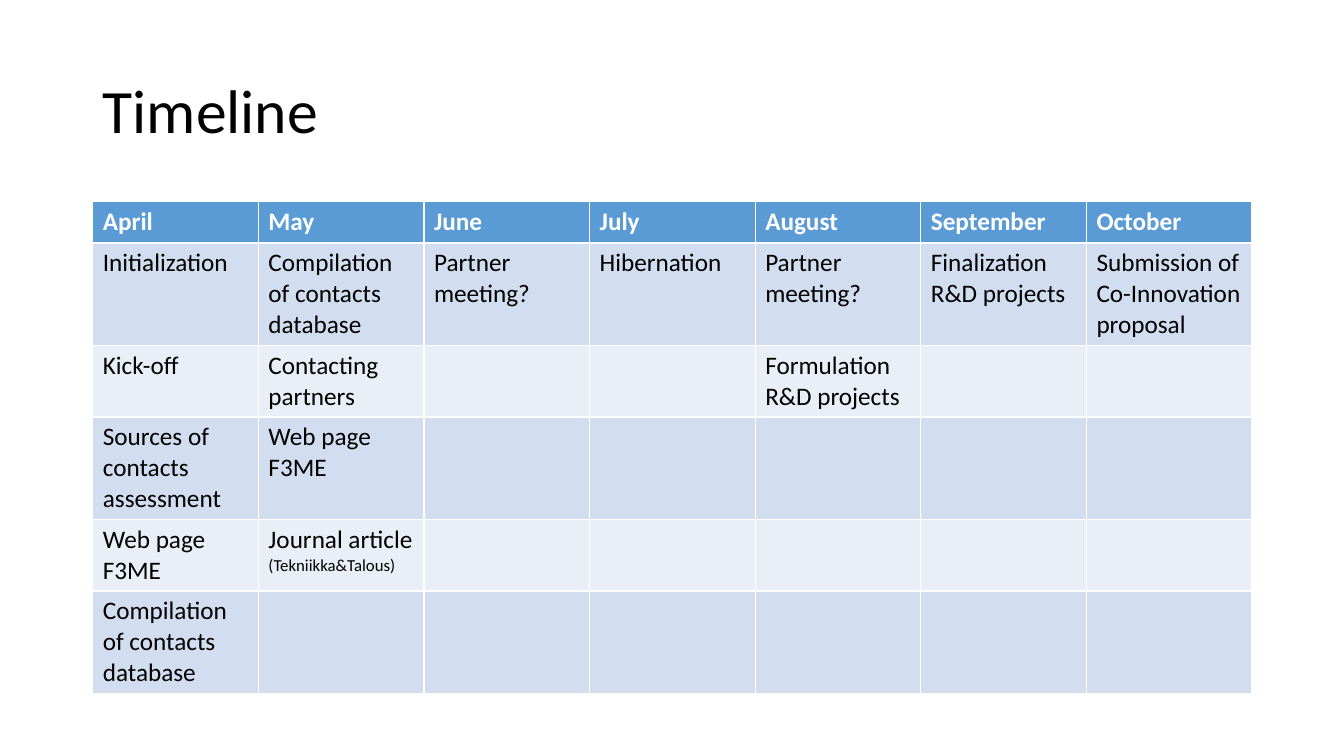
from pptx import Presentation
from pptx.dml.color import RGBColor
from pptx.enum.text import MSO_ANCHOR, MSO_AUTO_SIZE, PP_ALIGN
from pptx.util import Inches, Pt

MIDDLE = MSO_ANCHOR.MIDDLE
NO_FIT = MSO_AUTO_SIZE.NONE
LEFT = PP_ALIGN.LEFT
TITLE_ONLY = 5

FONT = "Calibri"
HEADER_FILL = "5B9BD5"
BAND_FILLS = ("D2DEEF", "EAEFF7")

TITLE_FORMAT = {"name": FONT, "size": Pt(44), "bold": False}
MONTH_FORMAT = {"name": FONT, "size": Pt(18), "bold": True}
TASK_FORMAT = {"name": FONT, "size": Pt(18), "bold": False}
DETAIL_FORMAT = {"name": FONT, "size": Pt(12), "bold": False}

MONTHS = ["April", "May", "June", "July", "August", "September", "October"]
TASKS = [
    ["Initialization", "Compilation of contacts database", "Partner meeting?",
     "Hibernation", "Partner meeting?", "Finalization R&D projects",
     "Submission of Co-Innovation proposal"],
    ["Kick-off", "Contacting partners", "", "", "Formulation R&D projects", "", ""],
    ["Sources of contacts assessment", "Web page F3ME", "", "", "", "", ""],
    ["Web page F3ME", "Journal article\n(Tekniikka&Talous)", "", "", "", "", ""],
    ["Compilation of contacts database", "", "", "", "", "", ""],
]
ROW_HEIGHTS = [0.41, 1.0, 0.7, 1.0, 0.7, 1.0]


def rgb(value):
    return RGBColor.from_string(value)


def apply(target, values):
    for name, value in values.items():
        setattr(target, name, value)


def style_font(font, values, color):
    apply(font, values)
    font.color.rgb = rgb(color)


def add_title(slide, wording, left, top, width, height):
    title = slide.shapes.title
    apply(title, {"left": Inches(left), "top": Inches(top),
                  "width": Inches(width), "height": Inches(height)})
    frame = title.text_frame
    frame.text = wording
    apply(frame, {"vertical_anchor": MIDDLE, "word_wrap": True, "auto_size": NO_FIT})
    heading = frame.paragraphs[0]
    apply(heading, {"alignment": LEFT, "line_spacing": 0.9})
    style_font(heading.font, TITLE_FORMAT, "000000")


def fill_cell(cell, wording, fill, main_format, color):
    cell.fill.solid()
    cell.fill.fore_color.rgb = rgb(fill)
    cell.text_frame.text = wording
    for index, line in enumerate(cell.text_frame.paragraphs):
        style_font(line.font, DETAIL_FORMAT if index else main_format, color)


def add_timeline(slide, left, top, width):
    schedule = slide.shapes.add_table(
        len(TASKS) + 1, len(MONTHS), Inches(left), Inches(top),
        Inches(width), Inches(sum(ROW_HEIGHTS))).table
    for row, height in zip(schedule.rows, ROW_HEIGHTS):
        row.height = Inches(height)
    for column, month in enumerate(MONTHS):
        fill_cell(schedule.cell(0, column), month, HEADER_FILL, MONTH_FORMAT, "FFFFFF")
    for row, tasks in enumerate(TASKS):
        for column, task in enumerate(tasks):
            fill_cell(schedule.cell(row + 1, column), task,
                      BAND_FILLS[row % 2], TASK_FORMAT, "000000")


def main():
    deck = Presentation()
    apply(deck, {"slide_width": Inches(13.33), "slide_height": Inches(7.5)})
    slide = deck.slides.add_slide(deck.slide_layouts[TITLE_ONLY])
    add_title(slide, "Timeline", 0.92, 0.4, 11.5, 1.45)
    add_timeline(slide, 0.92, 2, 11.5)
    deck.save("out.pptx")


if __name__ == "__main__":
    main()
